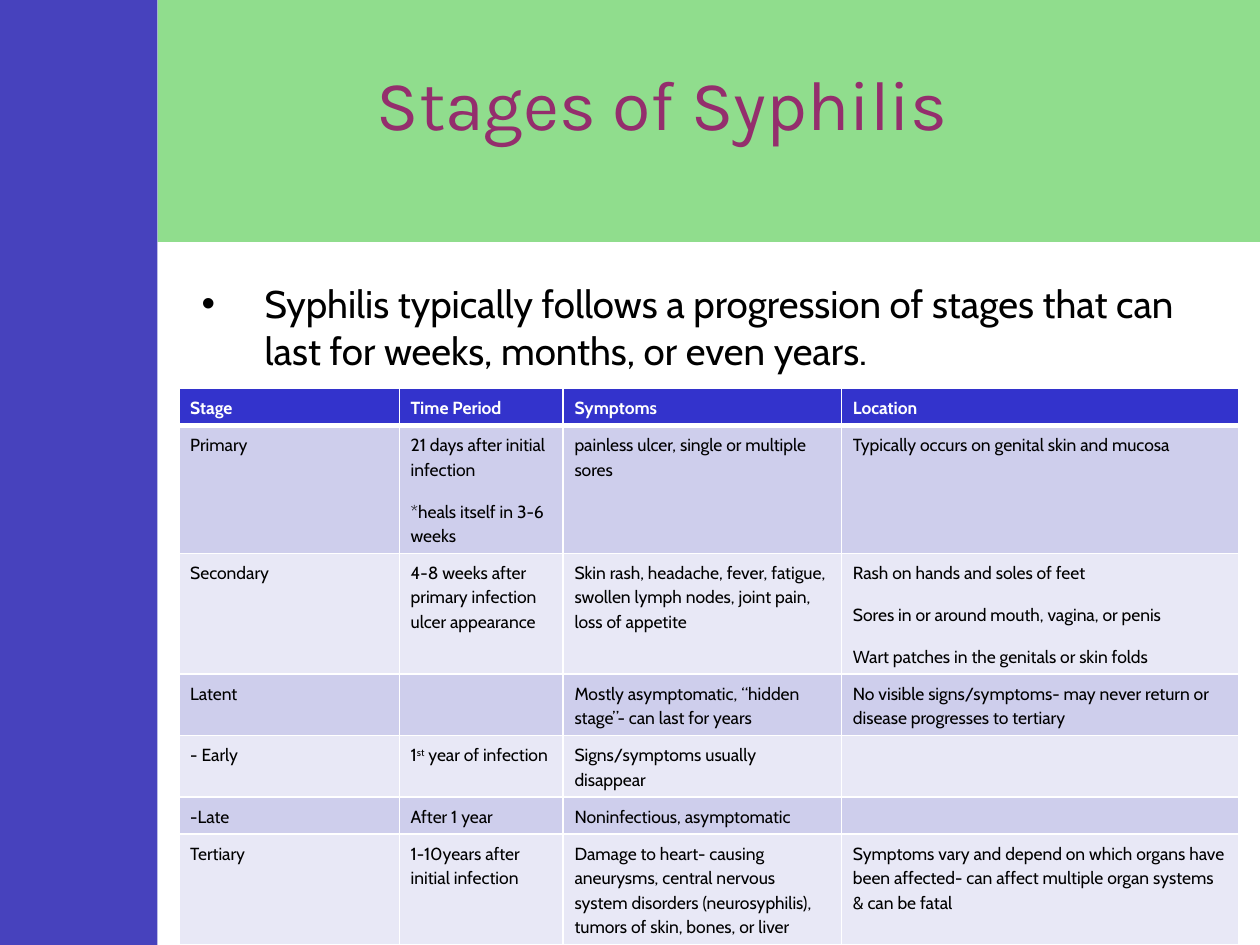
from lxml.etree import SubElement
from pptx import Presentation
from pptx.dml.color import RGBColor
from pptx.enum.shapes import MSO_SHAPE
from pptx.enum.text import MSO_ANCHOR, MSO_AUTO_SIZE, PP_ALIGN
from pptx.oxml.ns import qn
from pptx.util import Inches, Pt

WHITE = RGBColor(0xFF, 0xFF, 0xFF)
BLACK = RGBColor(0, 0, 0)
GREEN = RGBColor(0x90, 0xDD, 0x8D)
INDIGO = RGBColor(0x47, 0x42, 0xBD)
PLUM = RGBColor(0x94, 0x2E, 0x6D)
HEADER = RGBColor(0x33, 0x33, 0xCC)
BANDS = (RGBColor(0xE8, 0xE8, 0xF6), RGBColor(0xCE, 0xCE, 0xEC))

COL_WIDTHS = (1.75, 1.3, 2.21, 3.15)
ROW_HEIGHTS = (0.29, 1, 0.95, 0.48, 0.47, 0.29, 0.87)
# A line break separates paragraphs, carets enclose a superscript.
STAGES = (
    ("Stage", "Time Period", "Symptoms", "Location"),
    ("Primary", "21 days after initial infection\n*heals itself in 3-6 weeks",
     "painless ulcer, single or multiple sores",
     "Typically occurs on genital skin and mucosa"),
    ("Secondary", "4-8 weeks after primary infection ulcer appearance",
     "Skin rash, headache, fever, fatigue, swollen lymph nodes, joint pain, loss of appetite",
     "Rash on hands and soles of feet\nSores in or around mouth, vagina, or penis\n"
     "Wart patches in the genitals or skin folds"),
    ("Latent", "", "Mostly asymptomatic, “hidden stage”- can last for years",
     "No visible signs/symptoms- may never return or disease progresses to tertiary"),
    ("- Early", "1^st^ year of infection", "Signs/symptoms usually disappear", ""),
    ("-Late", "After 1 year", "Noninfectious, asymptomatic", ""),
    ("Tertiary", "1-10years after initial infection",
     "Damage to heart- causing aneurysms, central nervous system disorders "
     "(neurosyphilis), tumors of skin, bones, or liver",
     "Symptoms vary and depend on which organs have been affected- can affect "
     "multiple organ systems & can be fatal"),
)


class Deck:
    """Holds the style and the current slide; boxes are shares of the slide's size."""
    title_font, body_font = "Karla", "Cabin"

    def __init__(self, prs):
        self.prs = prs
        self.s = prs.slides.add_slide(prs.slide_layouts[1])

    def box(self, x, y, w, h):
        W, H = self.prs.slide_width, self.prs.slide_height
        return int(x * W), int(y * H), int(w * W), int(h * H)

    def set_font(self, font, name, size, color, bold=False):
        font.name, font.size, font.bold = name, Pt(size), bold
        font.color.rgb = color

    def panel(self, color, *share):
        """Adds a plain rectangle behind everything else."""
        sp = self.s.shapes.add_shape(MSO_SHAPE.RECTANGLE, *self.box(*share))
        sp.shadow.inherit = False
        sp.fill.solid()
        sp.fill.fore_color.rgb = color
        sp.line.fill.background()
        self.s.shapes._spTree.insert(2, sp._element)

    def placeholder(self, idx, text, name, size, color, *share):
        sp = self.s.placeholders[idx]
        sp.left, sp.top, sp.width, sp.height = self.box(*share)
        tf = sp.text_frame
        tf.text, tf.word_wrap, tf.auto_size = text, True, MSO_AUTO_SIZE.NONE
        p = tf.paragraphs[0]
        self.set_font(p.font, name, size, color)
        return tf, p

    def title(self, text, *share):
        tf, p = self.placeholder(0, text, self.title_font, 40, PLUM, *share)
        tf.vertical_anchor = MSO_ANCHOR.MIDDLE
        p.alignment = PP_ALIGN.CENTER

    def bullet(self, text, *share):
        p = self.placeholder(1, text, self.body_font, 22, BLACK, *share)[1]
        pPr = p._p.get_or_add_pPr()
        pPr.set("marL", str(Inches(0.5)))
        pPr.set("indent", str(-Inches(0.5)))

    def table(self, rows, widths, heights, *share):
        table = self.s.shapes.add_table(len(rows), len(widths), *self.box(*share)).table
        for col, width in zip(table.columns, widths):
            col.width = Inches(width)
        for row, height in zip(table.rows, heights):
            row.height = Inches(height)
        for r, texts in enumerate(rows):
            for c, text in enumerate(texts):
                self.cell(table.cell(r, c), text, r)

    def cell(self, cell, text, row):
        head = row == 0
        cell.margin_left = cell.margin_right = Inches(0.09)
        cell.margin_top = cell.margin_bottom = Inches(0.05)
        self.borders(cell, top=3 if row == 1 else 1, bottom=3 if head else 1)
        cell.fill.solid()
        cell.fill.fore_color.rgb = HEADER if head else BANDS[row % 2]
        tf = cell.text_frame
        for i, line in enumerate(text.split("\n")):
            p = tf.add_paragraph() if i else tf.paragraphs[0]
            p.line_spacing, p.space_after = 1.15, Pt(10)
            self.set_font(p.font, self.body_font, 10, WHITE if head else BLACK, head)
            if not line:
                p._p.get_or_add_endParaRPr().set("sz", "1000")
                continue
            for n, part in enumerate(line.split("^")):
                run = p.add_run()
                run.text = part
                if n % 2:
                    run.font._element.set("baseline", "30000")

    def borders(self, cell, top, bottom):
        tcPr = cell._tc.get_or_add_tcPr()
        for side, width in (("L", 1), ("R", 1), ("T", top), ("B", bottom)):
            ln = SubElement(tcPr, qn(f"a:ln{side}"), w=str(Pt(width)))
            SubElement(SubElement(ln, qn("a:solidFill")), qn("a:srgbClr"), val=str(WHITE))


def main():
    prs = Presentation()
    prs.slide_width, prs.slide_height = Inches(10), Inches(7.5)
    deck = Deck(prs)
    deck.panel(INDIGO, 0, 0, 0.125, 1)
    deck.panel(GREEN, 0.125, 0, 0.875, 0.256)
    deck.title("Stages of Syphilis", 0.138, 0.013, 0.775, 0.19)
    deck.bullet("Syphilis typically follows a progression of stages that can last for "
                "weeks, months, or even years.", 0.15, 0.29, 0.825, 0.6)
    deck.table(STAGES, COL_WIDTHS, ROW_HEIGHTS, 0.142, 0.411, 0.842, 0.579)
    prs.save("out.pptx")


if __name__ == "__main__":
    main()
